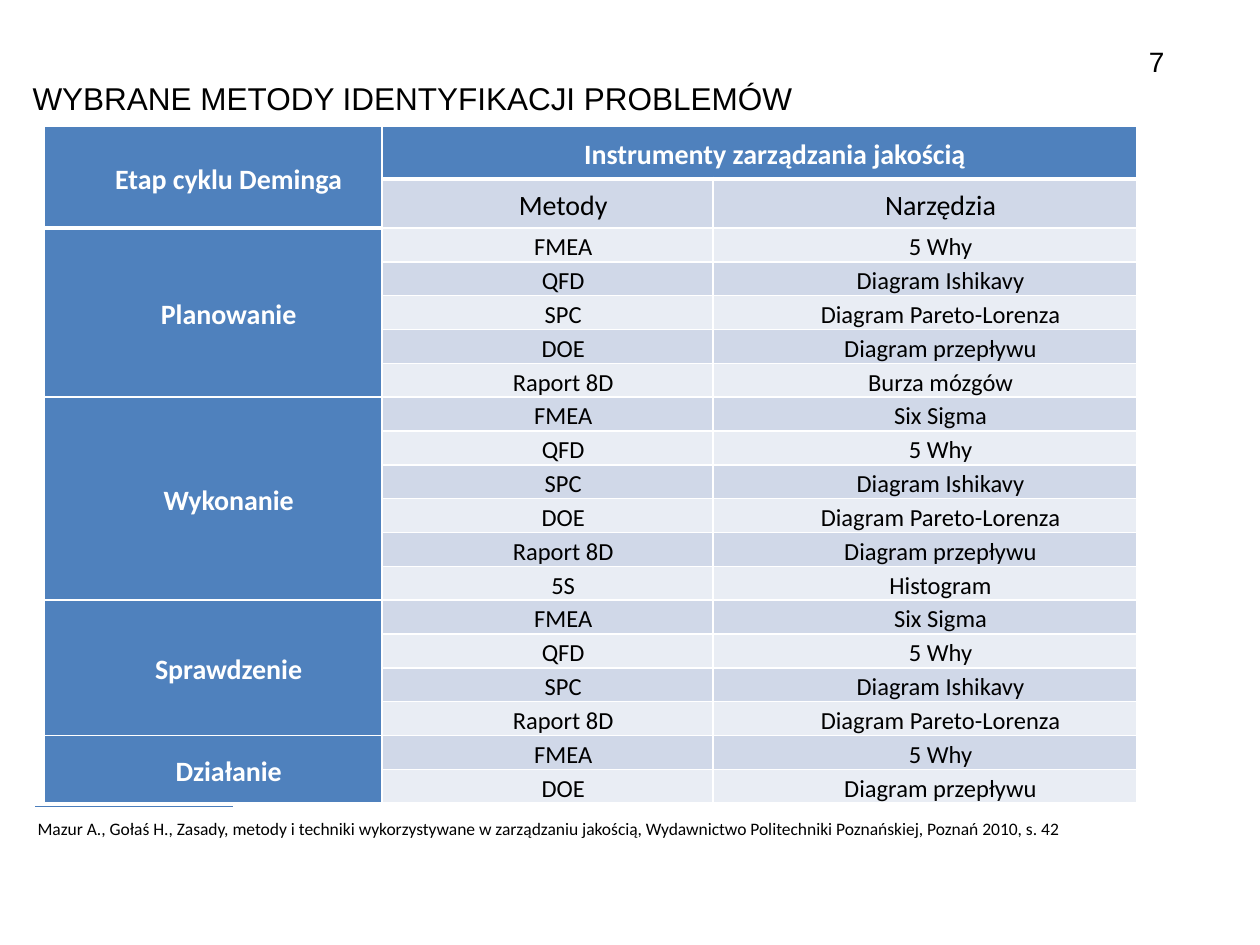
from lxml import etree
from pptx import Presentation
from pptx.dml.color import RGBColor
from pptx.enum.shapes import MSO_CONNECTOR
from pptx.enum.text import MSO_ANCHOR, PP_ALIGN
from pptx.oxml.ns import qn
from pptx.util import Inches, Pt

STRAIGHT = MSO_CONNECTOR.STRAIGHT
TOP, MIDDLE, BOTTOM = MSO_ANCHOR.TOP, MSO_ANCHOR.MIDDLE, MSO_ANCHOR.BOTTOM
LEFT, CENTER = PP_ALIGN.LEFT, PP_ALIGN.CENTER
RIGHT, JUSTIFY = PP_ALIGN.RIGHT, PP_ALIGN.JUSTIFY

BLACK, WHITE = "000000", "FFFFFF"
HEADER_BLUE, DARK_BAND, LIGHT_BAND = "4F81BD", "D0D8E8", "E9EDF4"
RULE_BLUE = "4B7EBC"

COLUMN_WIDTHS = [2.68, 2.63, 3.36]
HEADER_HEIGHTS = [0.42, 0.39]
ROW_HEIGHT = 0.25
STAGES = {
    "Planowanie": [
        ("FMEA", "5 Why"),
        ("QFD", "Diagram Ishikavy"),
        ("SPC", "Diagram Pareto-Lorenza"),
        ("DOE", "Diagram przepływu"),
        ("Raport 8D", "Burza mózgów"),
    ],
    "Wykonanie": [
        ("FMEA", "Six Sigma"),
        ("QFD", "5 Why"),
        ("SPC", "Diagram Ishikavy"),
        ("DOE", "Diagram Pareto-Lorenza"),
        ("Raport 8D", "Diagram przepływu"),
        ("5S", "Histogram"),
    ],
    "Sprawdzenie": [
        ("FMEA", "Six Sigma"),
        ("QFD", "5 Why"),
        ("SPC", "Diagram Ishikavy"),
        ("Raport 8D", "Diagram Pareto-Lorenza"),
    ],
    "Działanie": [
        ("FMEA", "5 Why"),
        ("DOE", "Diagram przepływu"),
    ],
}


def color(hex_text):
    return RGBColor.from_string(hex_text)


def write(frame, text, size=14, font="Calibri", fill=BLACK, bold=False, align=LEFT):
    """Put one formatted span into the first paragraph and return that paragraph."""
    para = frame.paragraphs[0]
    para.alignment = align
    span = para.add_run()
    span.text = text
    span.font.size = Pt(size)
    span.font.name = font
    span.font.bold = bold
    span.font.color.rgb = color(fill)
    return para


def set_borders(cell, bottom=1):
    """Draw white cell borders; bottom is the lower line's width in points."""
    properties = cell._tc.get_or_add_tcPr()
    for side, width in (("L", 1), ("R", 1), ("T", 1), ("B", bottom)):
        line = etree.SubElement(properties, qn(f"a:ln{side}"), w=str(Pt(width)))
        fill = etree.SubElement(line, qn("a:solidFill"))
        etree.SubElement(fill, qn("a:srgbClr"), val=WHITE)


class SlideBuilder:
    def __init__(self, page):
        self.page = page

    def text(self, left, top, width, height, text, anchor=TOP, **style):
        box = self.page.shapes.add_textbox(
            Inches(left), Inches(top), Inches(width), Inches(height))
        box.text_frame.word_wrap = True
        box.text_frame.vertical_anchor = anchor
        write(box.text_frame, text, **style)

    def rule(self, left, top, right, hex_text, width):
        line = self.page.shapes.add_connector(
            STRAIGHT, Inches(left), Inches(top), Inches(right), Inches(top))
        line.line.color.rgb = color(hex_text)
        line.line.width = Pt(width)
        etree.SubElement(line._element.spPr, qn("a:effectLst"))

    def table(self, left, top, widths, heights):
        frame = self.page.shapes.add_table(
            len(heights), len(widths), Inches(left), Inches(top),
            Inches(sum(widths)), Inches(sum(heights)))
        table = frame.table
        table.first_row = table.horz_banding = False
        for column, width in zip(table.columns, widths):
            column.width = Inches(width)
        for row, height in zip(table.rows, heights):
            row.height = Inches(height)
        for index, row in enumerate(table.rows):
            for number, cell in enumerate(row.cells):
                above_body = index == 0 or (index == 1 and number == 0)
                set_borders(cell, bottom=3 if above_body else 1)
                band = DARK_BAND if index % 2 else LIGHT_BAND
                is_header = index == 0 or number == 0
                cell.fill.solid()
                cell.fill.fore_color.rgb = color(HEADER_BLUE if is_header else band)
                cell.margin_left = cell.margin_right = Inches(0.03)
                cell.margin_top = cell.margin_bottom = 0
        return table

    def cell(self, cell, text, anchor=MIDDLE, **style):
        cell.vertical_anchor = anchor
        para = write(cell.text_frame, text, align=CENTER, **style)
        para.line_spacing = 1.15
        properties = para._p.get_or_add_pPr()
        properties.set("marL", str(Inches(0.5)))
        properties.set("indent", str(Inches(-0.25)))

    def heading(self, table, row, column, last_row, last_column, text):
        """Merge a block of cells and label it in bold white."""
        origin = table.cell(row, column)
        origin.merge(table.cell(last_row, last_column))
        self.cell(origin, text, size=16, fill=WHITE, bold=True)


def main():
    deck = Presentation()
    deck.slide_width, deck.slide_height = Inches(10), Inches(7.5)
    slide = SlideBuilder(deck.slides.add_slide(deck.slide_layouts[6]))

    slide.text(0.16, 0.58, 8.12, 0.73, "WYBRANE METODY IDENTYFIKACJI PROBLEMÓW",
               size=18, font="Arial")
    slide.text(7, 0.23, 2.34, 0.52, "7", anchor=MIDDLE,
               size=16, font="Arial", align=RIGHT)
    slide.text(0.2, 6.44, 9.29, 0.27,
               "Mazur A., Gołaś H., Zasady, metody i techniki wykorzystywane w "
               "zarządzaniu jakością, Wydawnictwo Politechniki Poznańskiej, "
               "Poznań 2010, s. 42", size=10, align=JUSTIFY)
    slide.rule(0.28, 6.4, 1.85, RULE_BLUE, 0.75)

    body_rows = sum(len(pairs) for pairs in STAGES.values())
    table = slide.table(0.35, 1, COLUMN_WIDTHS,
                        HEADER_HEIGHTS + [ROW_HEIGHT] * body_rows)
    slide.heading(table, 0, 0, 1, 0, "Etap cyklu Deminga")
    slide.heading(table, 0, 1, 0, 2, "Instrumenty zarządzania jakością")
    for column, label in enumerate(("Metody", "Narzędzia"), start=1):
        slide.cell(table.cell(1, column), label, size=16)

    row = len(HEADER_HEIGHTS)
    for stage, pairs in STAGES.items():
        slide.heading(table, row, 0, row + len(pairs) - 1, 0, stage)
        for pair in pairs:
            for column, label in enumerate(pair, start=1):
                slide.cell(table.cell(row, column), label, anchor=BOTTOM)
            row += 1

    deck.save("out.pptx")


if __name__ == "__main__":
    main()
